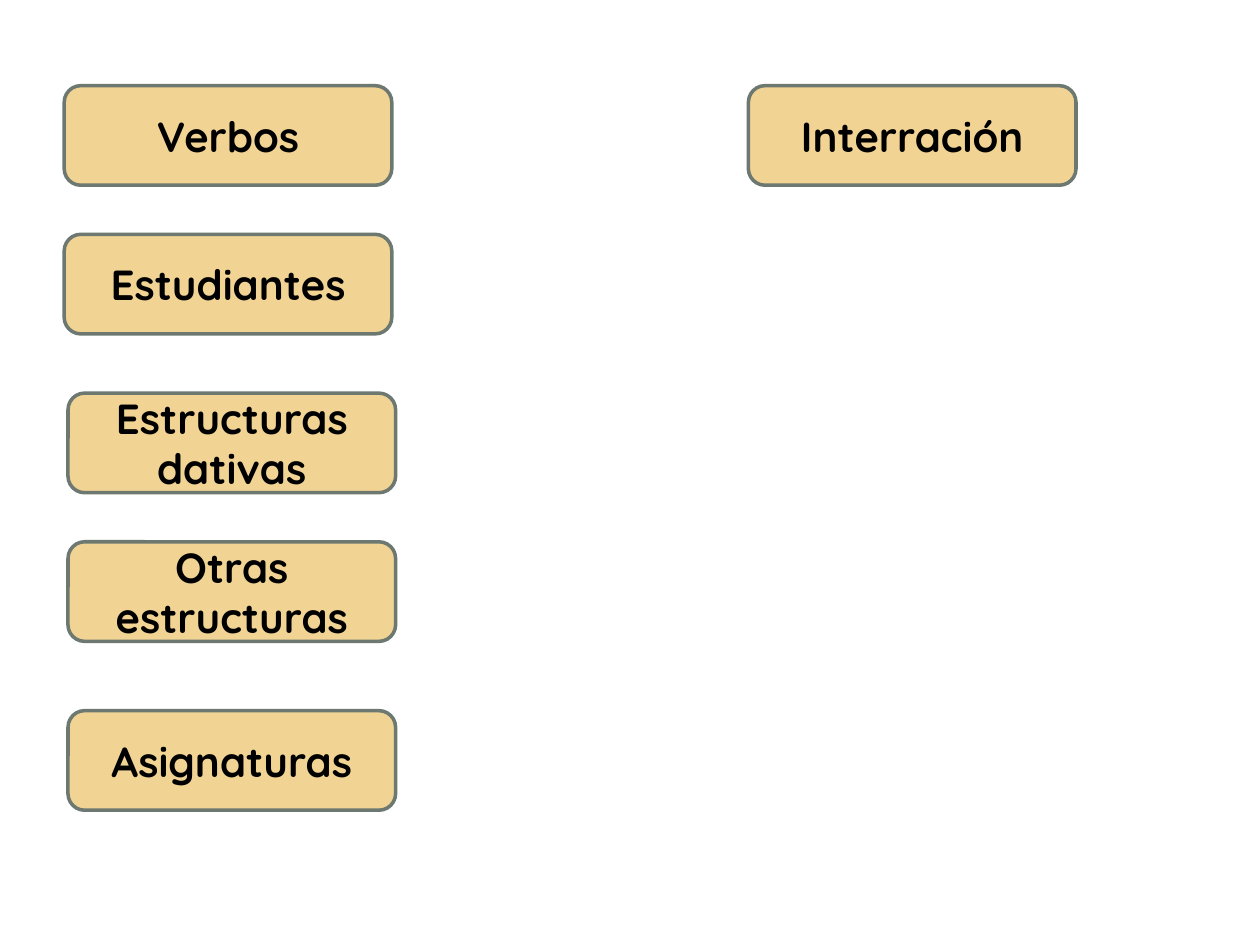
"""Build a slide of labelled category cards."""
from pptx import Presentation
from pptx import util as u
from pptx.dml.color import RGBColor
from pptx.enum import shapes, text

COLORS = {"panel": "FFFFFF", "card": "F1D394", "border": "6D7871", "label": "000000"}
CARD_SIZE = (2.6, 0.79)
CARDS = [
    ("Verbos", 0.51, 0.68),
    ("Estudiantes", 0.51, 1.86),
    ("Estructuras dativas", 0.54, 3.12),
    ("Otras estructuras", 0.54, 4.3),
    ("Asignaturas", 0.54, 5.64),
    ("Interración", 5.94, 0.68),
]


class CardSlide:
    """Hold the card style and the current slide."""

    font = "Quicksand"
    font_size = u.Pt(24)
    border_width = u.Pt(2)

    def __init__(self, slide):
        """Keep the slide to draw on."""
        self.slide = slide

    def rounded(self, left, top, width, height, fill):
        """Add a filled rounded rectangle without a line."""
        box = self.slide.shapes.add_shape(
            shapes.MSO_SHAPE.ROUNDED_RECTANGLE,
            *(u.Inches(length) for length in (left, top, width, height)))
        box.shadow.inherit = False
        box.fill.solid()
        box.fill.fore_color.rgb = RGBColor.from_string(COLORS[fill])
        box.line.fill.background()
        return box

    def panel(self, left, top, width, height):
        """Add the page panel with slightly rounded corners."""
        self.rounded(left, top, width, height, "panel").adjustments[0] = 0.017

    def card(self, label, left, top):
        """Add a bordered card with a centred bold label."""
        card = self.rounded(left, top, *CARD_SIZE, "card")
        card.line.color.rgb = RGBColor.from_string(COLORS["border"])
        card.line.width = self.border_width
        frame = card.text_frame
        frame.word_wrap = True
        frame.vertical_anchor = text.MSO_ANCHOR.MIDDLE
        frame.text = label
        paragraph = frame.paragraphs[0]
        paragraph.alignment = text.PP_ALIGN.CENTER
        font = paragraph.runs[0].font
        font.name, font.size, font.bold = self.font, self.font_size, True
        font.color.rgb = RGBColor.from_string(COLORS["label"])


def main():
    """Create and save the presentation."""
    deck = Presentation()
    deck.slide_width, deck.slide_height = u.Inches(10), u.Inches(7.5)
    page = CardSlide(deck.slides.add_slide(deck.slide_layouts[6]))
    page.panel(0.1, 0.11, 9.8, 7.29)
    for label, left, top in CARDS:
        page.card(label, left, top)
    deck.save("out.pptx")


if __name__ == "__main__":
    main()
